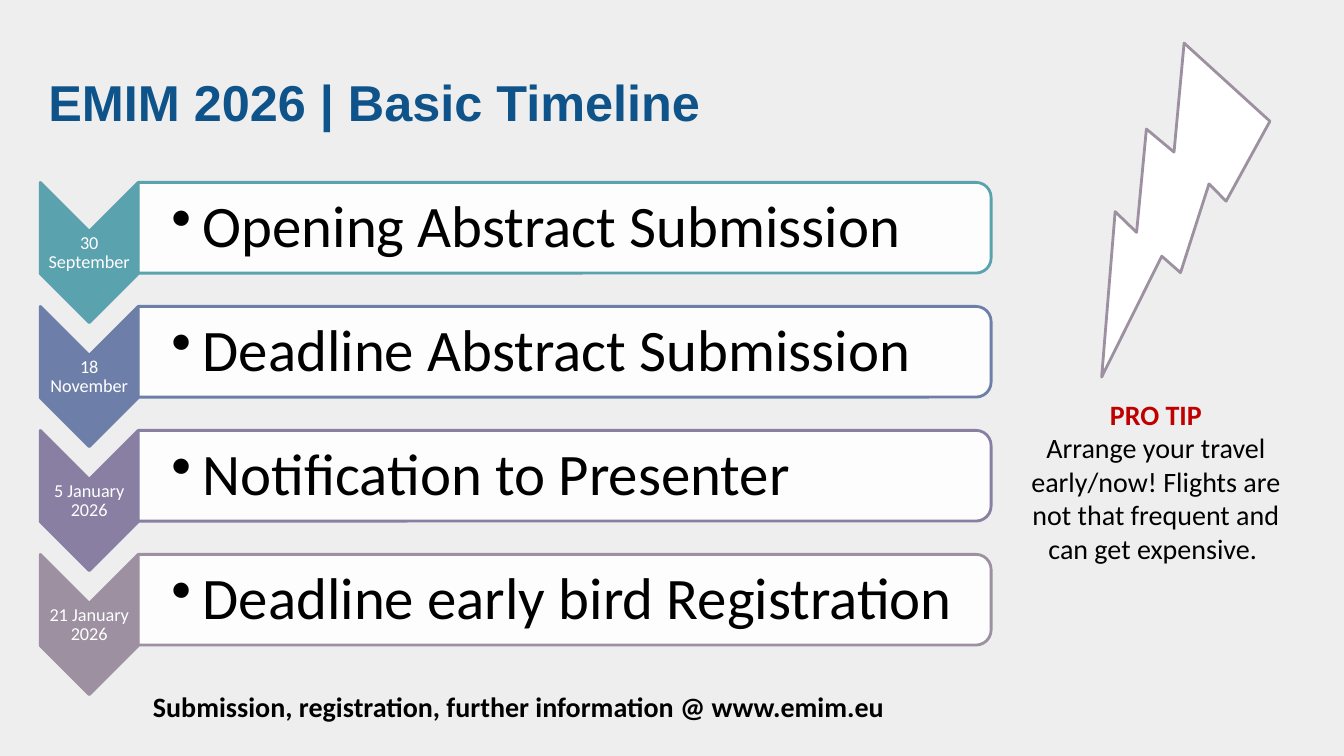
from lxml import etree
from pptx import Presentation
from pptx.dml.color import RGBColor
from pptx.enum.shapes import MSO_SHAPE
from pptx.enum.text import MSO_ANCHOR, MSO_AUTO_SIZE, PP_ALIGN
from pptx.oxml.ns import qn
from pptx.util import Inches, Pt

CHEVRON = MSO_SHAPE.CHEVRON
BAR = MSO_SHAPE.ROUND_2_SAME_RECTANGLE
BOLT = MSO_SHAPE.LIGHTNING_BOLT
LEFT, CENTER = PP_ALIGN.LEFT, PP_ALIGN.CENTER
TOP, MIDDLE, BOTTOM = MSO_ANCHOR.TOP, MSO_ANCHOR.MIDDLE, MSO_ANCHOR.BOTTOM

BLACK, WHITE, RED, BLUE = "000000", "FFFFFF", "C00000", "0E5389"
BACKGROUND, MAUVE = "EEEEEE", "9D90A0"

# Timeline grid: one date column, one event column, equal row pitch
DATE_LEFT, DATE_WIDTH = 0.4, 0.97
EVENT_LEFT, EVENT_WIDTH = DATE_LEFT + DATE_WIDTH, 8.46
FIRST_ROW, ROW_PITCH = 1.81, 1.23
CHEVRON_HEIGHT, BAR_HEIGHT = 1.39, 0.9

MILESTONES = [
    ("30 September", "Opening Abstract Submission", "5AA2AE"),
    ("18 November", "Deadline Abstract Submission", "6D7FA8"),
    ("5 January 2026", "Notification to Presenter", "887FA3"),
    ("21 January 2026", "Deadline early bird Registration", MAUVE),
]


def color(hex_value):
    return RGBColor.from_string(hex_value)


def add_run(paragraph, text, size, hex_value, bold=False, font="Calibri"):
    run = paragraph.add_run()
    run.text = text
    run.font.name = font
    run.font.size = Pt(size)
    run.font.bold = bold
    run.font.color.rgb = color(hex_value)


def add_rotated_shape(slide, kind, left, top, width, height, angle, fill, line, opacity=100):
    """Place a turned shape; left, top, width and height describe it before turning."""
    shape = slide.shapes.add_shape(kind, Inches(left), Inches(top), Inches(width), Inches(height))
    shape.rotation = angle
    shape.shadow.inherit = False
    shape.fill.solid()
    shape.fill.fore_color.rgb = color(fill)
    shape.line.color.rgb = color(line)
    shape.line.width = Pt(2)
    if opacity < 100:
        fill_color = shape._element.spPr.find(qn("a:solidFill"))[0]
        etree.SubElement(fill_color, qn("a:alpha"), val=str(opacity * 1000))


def add_upright_shape(slide, kind, left, top, width, height, fill, line, opacity=100):
    """Place a quarter-turned shape so that it covers the given visible box."""
    shift = (width - height) / 2
    add_rotated_shape(slide, kind, left + shift, top - shift, height, width, 90,
                      fill, line, opacity)


def add_text_box(slide, left, top, width, height, anchor=TOP, margins=(0.1, 0.05, 0.1, 0.05)):
    box = slide.shapes.add_textbox(Inches(left), Inches(top), Inches(width), Inches(height))
    frame = box.text_frame
    frame.word_wrap = True
    frame.vertical_anchor = anchor
    frame.margin_left, frame.margin_top, frame.margin_right, frame.margin_bottom = (
        Inches(margin) for margin in margins)
    return frame


def add_bullet(paragraph, indent):
    properties = paragraph._p.get_or_add_pPr()
    properties.set("marL", str(Inches(indent)))
    properties.set("indent", str(-Inches(indent)))
    etree.SubElement(properties, qn("a:buChar"), char="•")


def add_title(slide, text):
    title = slide.shapes.title
    title.left, title.top, title.width, title.height = map(Inches, (0.38, 0.39, 12.6, 0.97))
    frame = title.text_frame
    frame.auto_size = MSO_AUTO_SIZE.NONE
    frame.vertical_anchor = BOTTOM
    paragraph = frame.paragraphs[0]
    paragraph.alignment = LEFT
    add_run(paragraph, text, 36, BLUE, bold=True, font="Arial")


def add_milestone(slide, row, date, event, accent):
    top = FIRST_ROW + row * ROW_PITCH
    # Date arrow
    add_upright_shape(slide, CHEVRON, DATE_LEFT, top, DATE_WIDTH, CHEVRON_HEIGHT, accent, accent)
    frame = add_text_box(slide, DATE_LEFT, top + 0.49, DATE_WIDTH, 0.42, MIDDLE, (0.01,) * 4)
    paragraph = frame.paragraphs[0]
    paragraph.alignment = CENTER
    paragraph.line_spacing = 0.9
    add_run(paragraph, date, 13, WHITE)
    # Event bar
    add_upright_shape(slide, BAR, EVENT_LEFT, top, EVENT_WIDTH, BAR_HEIGHT, WHITE, accent, 90)
    frame = add_text_box(slide, EVENT_LEFT, top + 0.05, EVENT_WIDTH - 0.05, 0.82, MIDDLE,
                         (0.33, 0.03, 0.03, 0.03))
    paragraph = frame.paragraphs[0]
    paragraph.level = 1
    paragraph.line_spacing = 0.9
    add_bullet(paragraph, 0.31)
    add_run(paragraph, event, 42, BLACK)


def add_note(slide, left, top, width, height, lines):
    frame = add_text_box(slide, left, top, width, height)
    for index, (text, hex_value, bold) in enumerate(lines):
        paragraph = frame.add_paragraph() if index else frame.paragraphs[0]
        paragraph.alignment = CENTER
        add_run(paragraph, text, 20, hex_value, bold)


def main():
    presentation = Presentation()
    presentation.slide_width, presentation.slide_height = Inches(13.33), Inches(7.5)
    slide = presentation.slides.add_slide(presentation.slide_layouts[5])
    slide.background.fill.solid()
    slide.background.fill.fore_color.rgb = color(BACKGROUND)

    add_title(slide, "EMIM 2026 | Basic Timeline")

    # Timeline
    for row, milestone in enumerate(MILESTONES):
        add_milestone(slide, row, *milestone)

    # Travel tip
    add_rotated_shape(slide, BOLT, 10.2, 0.71, 2.69, 2.56, 65.9, WHITE, MAUVE)
    add_note(slide, 9.95, 3.89, 3.03, 1.78, [
        ("PRO TIP", RED, True),
        ("Arrange your travel early/now! Flights are not that frequent "
         "and can get expensive. ", BLACK, False),
    ])

    # Footer
    add_note(slide, 0.43, 6.79, 9.43, 0.44, [
        ("Submission, registration, further information @ www.emim.eu", BLACK, True),
    ])
    presentation.save("out.pptx")


if __name__ == "__main__":
    main()
